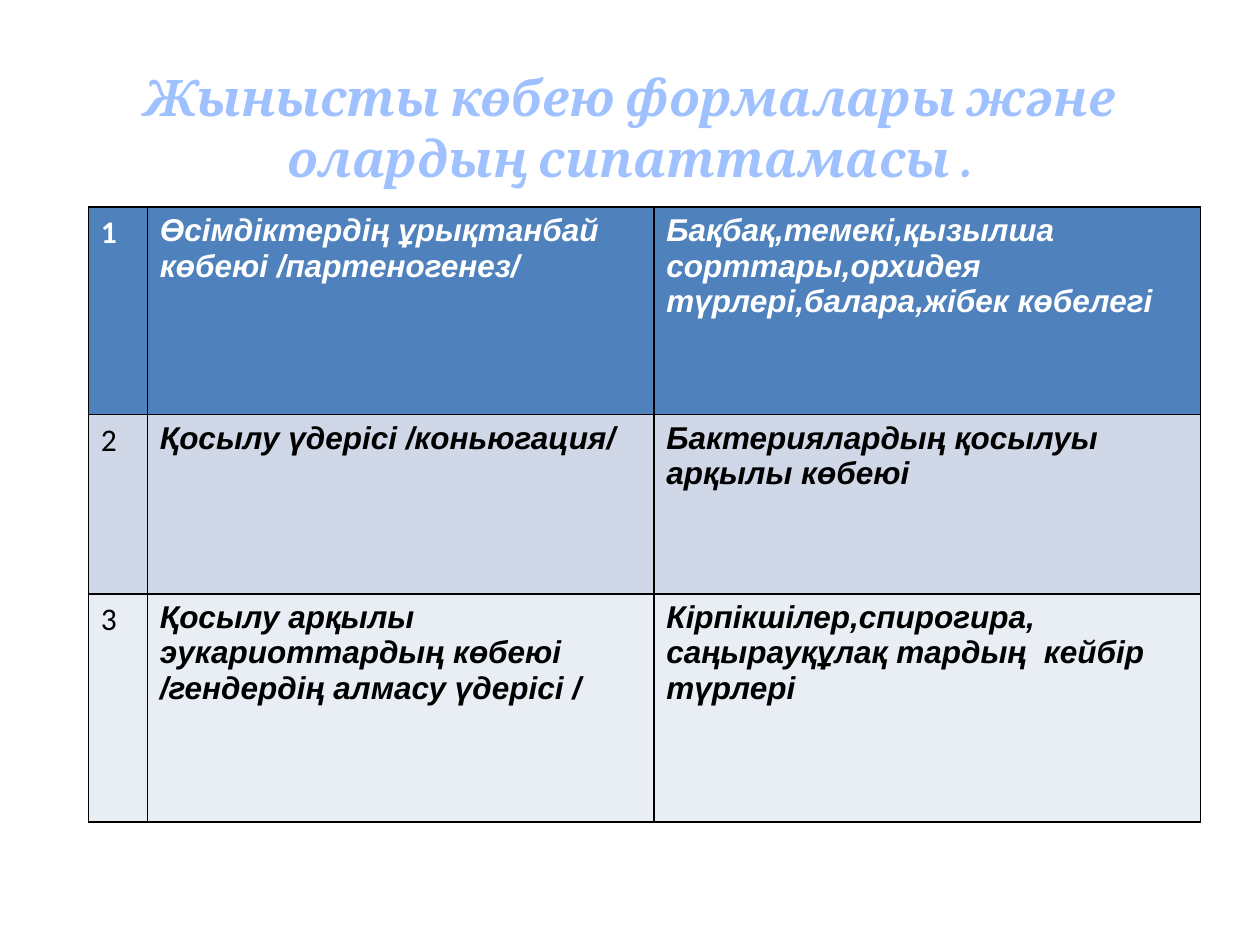
from lxml.etree import SubElement
from pptx import Presentation
from pptx.dml.color import RGBColor
from pptx.enum.text import MSO_ANCHOR, PP_ALIGN
from pptx.oxml.ns import qn
from pptx.util import Cm, Pt

ROWS = [
    ("1", "Өсімдіктердің ұрықтанбай көбеюі /партеногенез/",
     "Бақбақ,темекі,қызылша сорттары,орхидея түрлері,балара,жібек көбелегі"),
    ("2", "Қосылу үдерісі /коньюгация/",
     "Бактериялардың қосылуы арқылы көбеюі"),
    ("3", "Қосылу арқылы эукариоттардың көбеюі /гендердің алмасу үдерісі /",
     "Кірпікшілер,спирогира,\nсаңырауқұлақ тардың  кейбір түрлері"),
]
COLUMN_WIDTHS = [1.19, 10.21, 11.02]
ROW_HEIGHTS = [4.19, 3.61, 4.6]


def color(value):
    return RGBColor.from_string(value)


class SlideBuilder:
    title_format = {"name": "Cambria", "size": Pt(28.8), "bold": True, "italic": True}
    number_format = {"name": "Calibri", "size": Pt(18), "italic": False}
    entry_format = {"name": "Arial", "size": Pt(18), "bold": True, "italic": True}
    title_color = "A0C1FF"
    border_color = "000000"
    row_fills = ["4F81BD", "D0D8E8", "E9EDF4"]
    row_text_colors = ["FFFFFF", "000000", "000000"]

    def __init__(self, deck):
        self.page = deck.slides.add_slide(deck.slide_layouts[5])

    def set_text(self, frame, text, text_format, text_color):
        frame.text = text
        for para in frame.paragraphs:
            for span in para.runs:
                for name, value in text_format.items():
                    setattr(span.font, name, value)
                span.font.color.rgb = color(text_color)

    def title(self, text, left, top, width, height):
        box = self.page.shapes.title
        box.left, box.top, box.width, box.height = map(Cm, (left, top, width, height))
        frame = box.text_frame
        frame.word_wrap = True
        frame.vertical_anchor = MSO_ANCHOR.MIDDLE
        self.set_text(frame, text, self.title_format, self.title_color)
        frame.paragraphs[0].alignment = PP_ALIGN.CENTER

    def border(self, cell):
        properties = cell._tc.get_or_add_tcPr()
        for side in ("lnL", "lnR", "lnT", "lnB"):
            line = SubElement(properties, qn(f"a:{side}"), w=str(Pt(1)))
            fill = SubElement(line, qn("a:solidFill"))
            SubElement(fill, qn("a:srgbClr"), val=self.border_color)

    def table(self, rows, left, top, widths, heights):
        table = self.page.shapes.add_table(
            len(rows), len(widths), Cm(left), Cm(top),
            Cm(sum(widths)), Cm(sum(heights))).table
        for column, width in zip(table.columns, widths):
            column.width = Cm(width)
        for row, height in zip(table.rows, heights):
            row.height = Cm(height)
        for row_index, texts in enumerate(rows):
            for column_index, text in enumerate(texts):
                cell = table.cell(row_index, column_index)
                self.border(cell)
                cell.fill.solid()
                cell.fill.fore_color.rgb = color(self.row_fills[row_index])
                text_format = self.entry_format
                if column_index == 0:
                    text_format = {**self.number_format, "bold": row_index == 0}
                self.set_text(cell.text_frame, text, text_format,
                              self.row_text_colors[row_index])


def main():
    deck = Presentation()
    deck.slide_width, deck.slide_height = Cm(25.4), Cm(19.05)
    builder = SlideBuilder(deck)
    builder.title("Жынысты көбею формалары және олардың сипаттамасы .",
                  1.27, 1.19, 22.86, 2.74)
    builder.table(ROWS, 1.78, 4.17, COLUMN_WIDTHS, ROW_HEIGHTS)
    deck.save("out.pptx")


if __name__ == "__main__":
    main()
